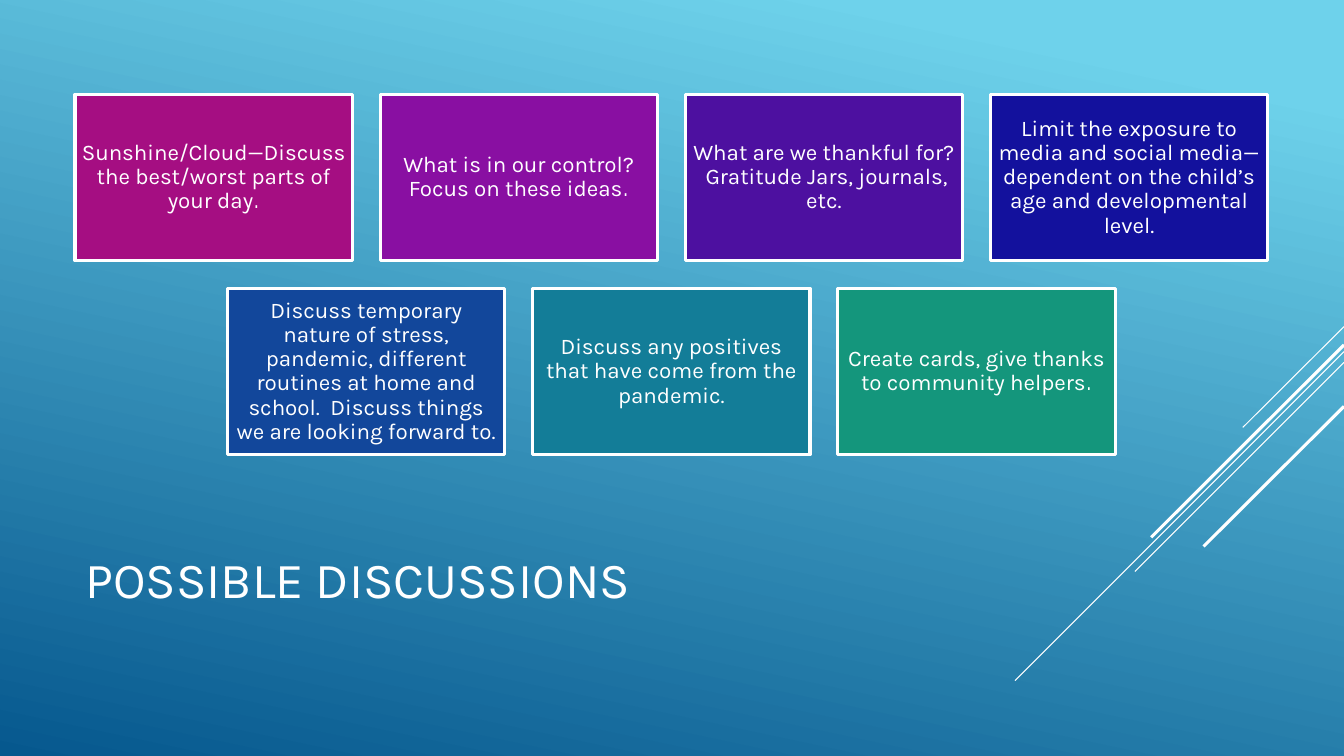
import dataclasses
import typing

import lxml.etree
import pptx
import pptx.dml.color
import pptx.enum.shapes
import pptx.enum.text
import pptx.oxml.ns
import pptx.slide
import pptx.util

Cm = pptx.util.Cm
Pt = pptx.util.Pt
ALIGN = pptx.enum.text.PP_ALIGN
MIDDLE = pptx.enum.text.MSO_ANCHOR.MIDDLE


@dataclasses.dataclass(frozen=True)
class Theme:
    sky: str = "6ED2EB"
    sea: str = "06588E"
    white: str = "FFFFFF"
    font: str = "Karla"
    stop_font: str = "TeX Gyre Adventor"
    title_size: float = 36
    card_size: float = 16
    border: float = 2.25


@dataclasses.dataclass(frozen=True)
class Card:
    text: str
    fill: str
    stop: str = ""  # closing full stop set in the second font


@dataclasses.dataclass(frozen=True)
class Ray:
    """A diagonal running down and left from the right slide edge, in cm."""
    top: float
    end_x: float
    end_y: float
    width: float = 0.75


THEME = Theme()
SLIDE_W, SLIDE_H = 33.87, 19.05
CARD_W, CARD_H, GAP = 6.99, 4.19, 0.7
CARDS_TOP, CARDS_CENTRE = 2.38, 16.92

RAYS = [
    Ray(8.23, 31.32, 10.77),
    Ray(8.86, 25.58, 17.15),
    Ray(9.13, 28.6, 14.4),
    Ray(8.69, 29.01, 13.54, 2.25),
    Ray(10.24, 30.33, 13.77, 2.25),
]

CARD_ROWS = [
    [
        Card("Sunshine/Cloud—Discuss the best/worst parts of your day", "A50E82", "."),
        Card("What is in our control? Focus on these ideas", "890FA2", "."),
        Card("What are we thankful for?  Gratitude Jars, journals, etc.", "4D10A0"),
        Card("Limit the exposure to media and social media—dependent on "
             "the child’s age and developmental level.", "13119D"),
    ],
    [
        Card("Discuss temporary nature of stress, pandemic, different routines at home "
             "and school.  Discuss things we are looking forward to.", "12479B"),
        Card("Discuss any positives that have come from the pandemic.", "137D98"),
        Card("Create cards, give thanks to community helpers", "14967C", "."),
    ],
]


def rgb(value: str) -> pptx.dml.color.RGBColor:
    return pptx.dml.color.RGBColor.from_string(value)


def apply(target: typing.Any, values: dict[str, typing.Any]) -> None:
    for name, value in values.items():
        setattr(target, name, value)


def add_run(p: typing.Any, text: str, font: str, size: float) -> None:
    r = p.add_run()
    r.text = text
    apply(r.font, {"name": font, "size": Pt(size)})
    r.font.color.rgb = rgb(THEME.white)


def paint_background(s: pptx.slide.Slide) -> None:
    fill = s.background.fill
    fill.gradient()
    fill.gradient_angle = 258
    stops = [(0.1, THEME.sky), (1.0, THEME.sea)]
    for stop, (position, color) in zip(fill.gradient_stops, stops):
        stop.position = position
        stop.color.rgb = rgb(color)


def add_ray(s: pptx.slide.Slide, ray: Ray) -> None:
    line = s.shapes.add_connector(
        pptx.enum.shapes.MSO_CONNECTOR.STRAIGHT,
        Cm(SLIDE_W), Cm(ray.top), Cm(ray.end_x), Cm(ray.end_y))
    line.line.color.rgb = rgb(THEME.white)
    line.line.width = Pt(ray.width)
    lxml.etree.SubElement(line._element.spPr, pptx.oxml.ns.qn("a:effectLst"))


def add_title(s: pptx.slide.Slide, text: str) -> None:
    title = s.shapes.title
    apply(title, {"left": Cm(1.9), "top": Cm(12.47),
                  "width": Cm(23.7), "height": Cm(4.19)})
    tf = title.text_frame
    apply(tf, {"vertical_anchor": MIDDLE, "word_wrap": True,
               "auto_size": pptx.enum.text.MSO_AUTO_SIZE.NONE})
    p = tf.paragraphs[0]
    p.alignment = ALIGN.LEFT
    add_run(p, text, THEME.font, THEME.title_size)


def add_card(s: pptx.slide.Slide, card: Card, left: float, top: float) -> None:
    sp = s.shapes.add_shape(
        pptx.enum.shapes.MSO_SHAPE.RECTANGLE,
        Cm(left), Cm(top), Cm(CARD_W), Cm(CARD_H))
    sp.shadow.inherit = False
    sp.fill.solid()
    sp.fill.fore_color.rgb = rgb(card.fill)
    sp.line.color.rgb = rgb(THEME.white)
    sp.line.width = Pt(THEME.border)
    tf = sp.text_frame
    inset = Cm(0.17)
    apply(tf, {"word_wrap": True, "vertical_anchor": MIDDLE,
               "margin_left": inset, "margin_right": inset,
               "margin_top": inset, "margin_bottom": inset})
    p = tf.paragraphs[0]
    apply(p, {"alignment": ALIGN.CENTER, "line_spacing": 0.9})
    add_run(p, card.text, THEME.font, THEME.card_size)
    if card.stop:
        add_run(p, card.stop, THEME.stop_font, THEME.card_size)


def add_card_rows(s: pptx.slide.Slide, rows: list[list[Card]]) -> None:
    """Centre each row of cards on the same vertical axis."""
    for i, row in enumerate(rows):
        row_width = len(row) * (CARD_W + GAP) - GAP
        for j, card in enumerate(row):
            left = CARDS_CENTRE - row_width / 2 + j * (CARD_W + GAP)
            add_card(s, card, left, CARDS_TOP + i * (CARD_H + GAP))


def main() -> None:
    prs = pptx.Presentation()
    apply(prs, {"slide_width": Cm(SLIDE_W), "slide_height": Cm(SLIDE_H)})
    s = prs.slides.add_slide(prs.slide_layouts.get_by_name("Title Only"))
    paint_background(s)
    for ray in RAYS:
        add_ray(s, ray)
    add_title(s, "POSSIBLE DISCUSSIONS")
    add_card_rows(s, CARD_ROWS)
    prs.save("out.pptx")


if __name__ == "__main__":
    main()
